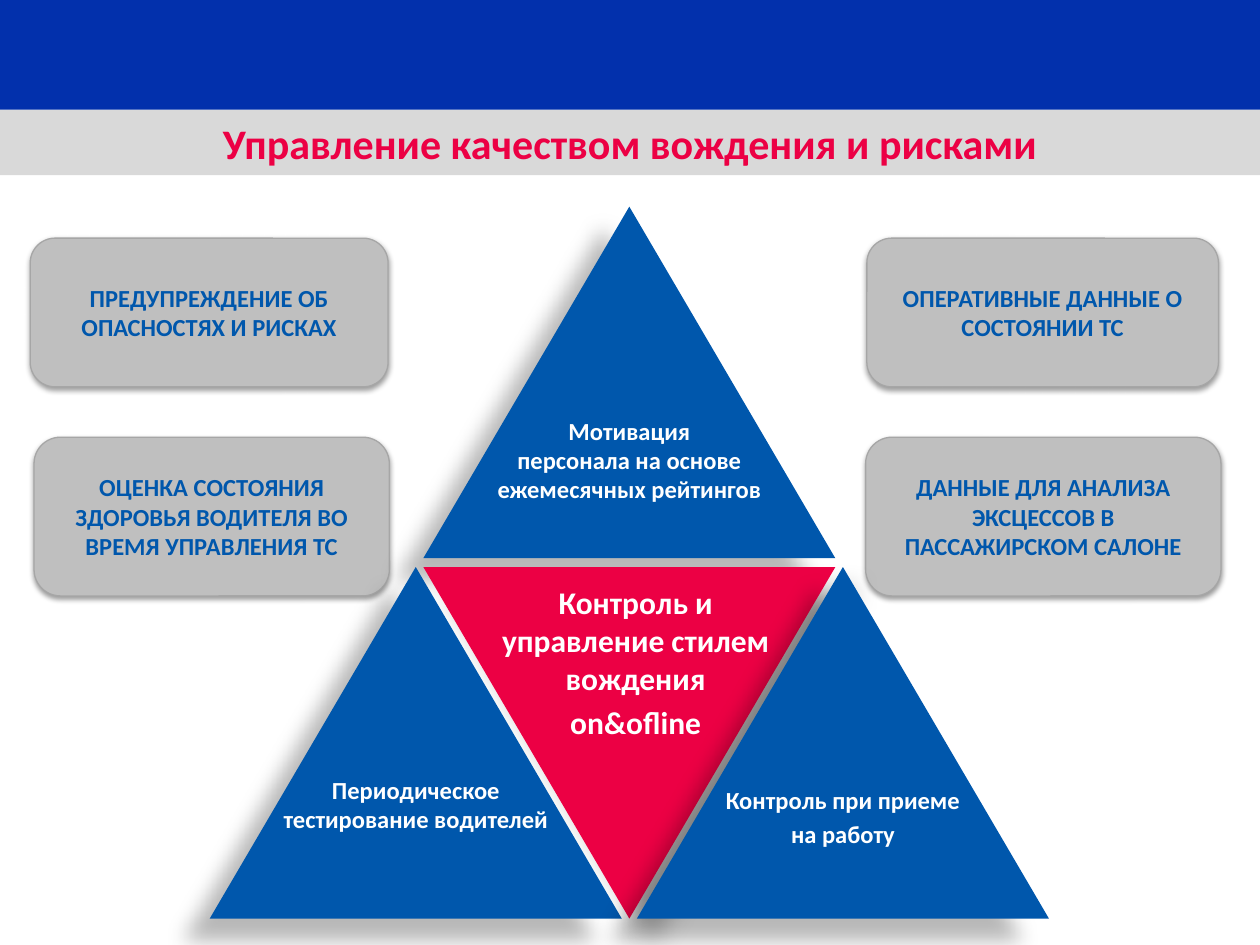
from dataclasses import dataclass

import pptx
import pptx.dml.color
import pptx.enum.shapes
import pptx.enum.text
import pptx.oxml
import pptx.oxml.ns
import pptx.util

SHAPES = pptx.enum.shapes.MSO_SHAPE
ANCHOR = pptx.enum.text.MSO_ANCHOR
CELL = pptx.util.Inches(0.1)  # the slide is a grid of 100 columns by 75 rows


@dataclass(frozen=True)
class Shadow:
    alpha: int
    blur: float
    distance: float
    angle: int


@dataclass(frozen=True)
class Theme:
    font: str = "Calibri"
    bar: str = "0230AC"
    title_band: str = "D9D9D9"
    accent: str = "EC0044"
    blue: str = "0057AC"
    callout: str = "BFBFBF"
    callout_line: str = "A6A6A6"
    white: str = "FFFFFF"
    title_size: int = 24
    center_size: int = 18
    body_size: int = 14
    callout_shadow: Shadow = Shadow(38, 3.1, 1.6, 90)
    outer_shadow: Shadow = Shadow(28, 11.8, 19.7, 141)
    center_shadow: Shadow = Shadow(30, 15, 18, 45)


@dataclass(frozen=True)
class Box:
    """A rectangle in grid columns and rows."""
    left: float
    top: float
    width: float
    height: float

    def inner(self, left, top, width, height):
        return Box(self.left + left, self.top + top, width, height)

    def lengths(self):
        return [round(value * CELL) for value in
                (self.left, self.top, self.width, self.height)]


THEME = Theme()


def rgb(color):
    return pptx.dml.color.RGBColor.from_string(color)


def write(shape, text, size, color, anchor=ANCHOR.MIDDLE):
    """Centred bold text; each new line is a paragraph, \\v a line break."""
    frame = shape.text_frame
    frame.word_wrap = True
    frame.vertical_anchor = anchor
    frame.text = text
    for index, paragraph in enumerate(frame.paragraphs):
        paragraph.alignment = pptx.enum.text.PP_ALIGN.CENTER
        paragraph.space_before = pptx.util.Pt(0.2 * size if index else 0)
        paragraph.font.name = THEME.font
        paragraph.font.size = pptx.util.Pt(size)
        paragraph.font.bold = True
        paragraph.font.color.rgb = rgb(color)


def cast_shadow(shape, shadow):
    effects = shape._element.spPr.find(pptx.oxml.ns.qn("a:effectLst"))
    effects.append(pptx.oxml.parse_xml(
        f'<a:outerShdw {pptx.oxml.ns.nsdecls("a")}'
        f' blurRad="{pptx.util.Pt(shadow.blur)}"'
        f' dist="{pptx.util.Pt(shadow.distance)}"'
        f' dir="{shadow.angle * 60000}" rotWithShape="0">'
        f'<a:srgbClr val="000000"><a:alpha val="{shadow.alpha * 1000}"/>'
        '</a:srgbClr></a:outerShdw>'))


def add_filled(slide, kind, box, fill, line=None, shadow=None):
    shape = slide.shapes.add_shape(kind, *box.lengths())
    shape.shadow.inherit = False
    shape.fill.solid()
    shape.fill.fore_color.rgb = rgb(fill)
    if line:
        shape.line.color.rgb = rgb(line)
        shape.line.width = pptx.util.Pt(0.75)
    else:
        shape.line.fill.background()
    if shadow:
        cast_shadow(shape, shadow)
    return shape


def add_label(slide, box, text, size):
    label = slide.shapes.add_textbox(*box.lengths())
    write(label, text, size, THEME.white, ANCHOR.TOP)


def build_header(slide, box):
    bar_height = 8.7
    add_filled(slide, SHAPES.RECTANGLE,
               box.inner(0, 0, box.width, bar_height), THEME.bar)
    title = slide.shapes.title
    band = box.inner(0, bar_height, box.width, box.height - bar_height)
    title.left, title.top, title.width, title.height = band.lengths()
    title.fill.solid()
    title.fill.fore_color.rgb = rgb(THEME.title_band)
    write(title, "Управление качеством вождения и рисками",
          THEME.title_size, THEME.accent)


def build_callout(slide, box, text):
    shape = add_filled(slide, SHAPES.ROUNDED_RECTANGLE, box, THEME.callout,
                       THEME.callout_line, THEME.callout_shadow)
    write(shape, text, THEME.body_size, THEME.blue)


def build_pyramid(slide, box):
    """Three triangles around an inverted one, with their labels on top."""
    width, height, label_width = 32.7, 27.9, 25.2
    middle, right = (box.width - width) / 2, box.width - width
    lower = box.height - height
    label_left = (width - label_width) / 2

    top_box, center_box, left_box, right_box = [
        box.inner(left, top, width, height) for left, top in
        ((middle, 0), (middle, lower), (0, lower), (right, lower))]

    add_filled(slide, SHAPES.ISOSCELES_TRIANGLE, top_box, THEME.blue,
               shadow=THEME.outer_shadow)
    center = add_filled(slide, SHAPES.ISOSCELES_TRIANGLE, center_box,
                        THEME.accent, shadow=THEME.center_shadow)
    center.rotation = 180
    add_label(slide, center_box.inner(label_left + 0.5, 0.8, label_width, 10.8),
              "Контроль и управление стилем вождения\non&ofline",
              THEME.center_size)
    for triangle_box in (left_box, right_box):
        add_filled(slide, SHAPES.ISOSCELES_TRIANGLE, triangle_box, THEME.blue,
                   shadow=THEME.outer_shadow)

    for triangle_box, top, text in (
            (top_box, 16.1, "Мотивация\vперсонала на основе ежемесячных рейтингов"),
            (left_box, 16, "Периодическое тестирование водителей"),
            (right_box, 16.8, "Контроль при приеме\nна работу")):
        add_label(slide, triangle_box.inner(label_left, top, label_width, 8.3),
                  text, THEME.body_size)


def main():
    presentation = pptx.Presentation()
    presentation.slide_width = 100 * CELL
    presentation.slide_height = 75 * CELL
    slide = presentation.slides.add_slide(
        presentation.slide_layouts.get_by_name("Title Only"))

    build_header(slide, Box(0, 0, 100, 13.9))
    for box, text in (
            (Box(2.4, 18.9, 28.4, 11.8), "ПРЕДУПРЕЖДЕНИЕ ОБ ОПАСНОСТЯХ И РИСКАХ"),
            (Box(2.7, 34.7, 28.2, 12.6),
             "ОЦЕНКА СОСТОЯНИЯ ЗДОРОВЬЯ ВОДИТЕЛЯ ВО ВРЕМЯ УПРАВЛЕНИЯ ТС"),
            (Box(68.7, 34.7, 28.2, 12.6),
             "ДАННЫЕ ДЛЯ АНАЛИЗА ЭКСЦЕССОВ В ПАССАЖИРСКОМ САЛОНЕ"),
            (Box(68.8, 18.9, 27.9, 11.8), "ОПЕРАТИВНЫЕ ДАННЫЕ О СОСТОЯНИИ ТС")):
        build_callout(slide, box, text)
    build_pyramid(slide, Box(16.65, 16.4, 66.6, 56.5))

    presentation.save("out.pptx")


if __name__ == "__main__":
    main()
